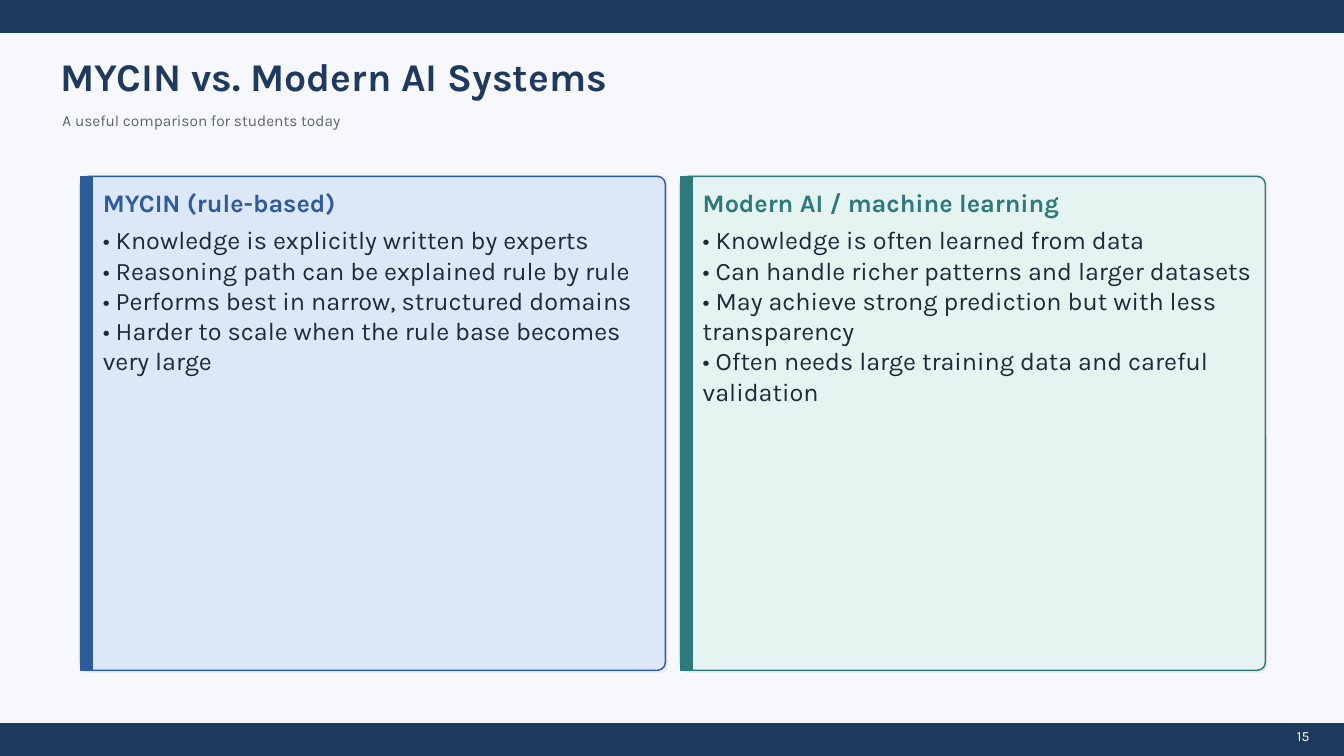
from dataclasses import dataclass

from lxml import etree
from pptx import Presentation
from pptx.dml.color import RGBColor
from pptx.enum.shapes import MSO_SHAPE
from pptx.enum.text import MSO_ANCHOR, PP_ALIGN
from pptx.oxml.ns import qn
from pptx.util import Inches, Pt

RECTANGLE, ROUNDED = MSO_SHAPE.RECTANGLE, MSO_SHAPE.ROUNDED_RECTANGLE
TOP, MIDDLE = MSO_ANCHOR.TOP, MSO_ANCHOR.MIDDLE
LEFT, CENTER = PP_ALIGN.LEFT, PP_ALIGN.CENTER

COLUMNS, ROWS = 133.3, 75
CELL = Inches(0.1)
PANEL_LEFT, PANEL_TOP = 8, 17.5
PANEL_WIDTH, PANEL_HEIGHT, PANEL_GAP = 58, 49, 1.5
BAR_HEIGHT = 3.2


@dataclass(frozen=True)
class Theme:
    font: str = "Karla"
    background: str = "F7F8FC"
    navy: str = "1F3A5F"
    muted: str = "5B6470"
    ink: str = "1F2937"
    white: str = "FFFFFF"
    shadow: str = "000000"
    blue: str = "2E5B9A"
    blue_tint: str = "DCE7F7"
    teal: str = "2C7A7B"
    teal_tint: str = "E5F4F1"
    title_size: int = 28
    body_size: int = 18
    subtitle_size: int = 11
    number_size: int = 10


class SlideBuilder:
    """Draws themed elements on one slide, measured in grid cells."""

    def __init__(self, slide, theme):
        self.slide = slide
        self.theme = theme
        fill = slide.background.fill
        fill.solid()
        fill.fore_color.rgb = RGBColor.from_string(theme.background)

    def place(self, *cells):
        return [round(cell * CELL) for cell in cells]

    def block(self, left, top, width, height, fill, line, kind=RECTANGLE):
        shape = self.slide.shapes.add_shape(kind, *self.place(left, top, width, height))
        shape.shadow.inherit = False
        shape.fill.solid()
        shape.fill.fore_color.rgb = RGBColor.from_string(fill)
        shape.line.color.rgb = RGBColor.from_string(line)
        shape.line.width = Pt(1)
        return shape

    def add_shadow(self, shape):
        effects = shape._element.spPr.find(qn("a:effectLst"))
        shadow = etree.SubElement(
            effects, qn("a:outerShdw"), blurRad=str(Pt(1)), dist=str(Pt(0.5)),
            dir=str(45 * 60000), algn="bl", rotWithShape="0")
        color = etree.SubElement(shadow, qn("a:srgbClr"), val=self.theme.shadow)
        etree.SubElement(color, qn("a:alpha"), val="12000")

    def text(self, left, top, width, height, lines, size, color,
             bold=False, anchor=MIDDLE, align=LEFT, padded=False):
        box = self.slide.shapes.add_textbox(*self.place(left, top, width, height))
        frame = box.text_frame
        frame.word_wrap = True
        frame.vertical_anchor = anchor
        if not padded:
            frame.margin_left = frame.margin_right = 0
            frame.margin_top = frame.margin_bottom = 0
        for index, line in enumerate(lines):
            paragraph = frame.add_paragraph() if index else frame.paragraphs[0]
            paragraph.alignment = align
            run = paragraph.add_run()
            run.text = line
            run.font.name = self.theme.font
            run.font.size = Pt(size)
            run.font.bold = bold
            run.font.color.rgb = RGBColor.from_string(color)

    def panel(self, index, heading, points, accent, tint):
        left = PANEL_LEFT + index * (PANEL_WIDTH + PANEL_GAP)
        size = self.theme.body_size
        card = self.block(left, PANEL_TOP, PANEL_WIDTH, PANEL_HEIGHT, tint, accent, ROUNDED)
        card.adjustments[0] = 0.016
        self.add_shadow(card)
        self.block(left, PANEL_TOP, 1.2, PANEL_HEIGHT, accent, accent)
        self.text(left + 2.2, PANEL_TOP + 1.2, 55, 2.8, [heading], size, accent, bold=True)
        self.text(left + 2.2, PANEL_TOP + 4.8, 55, 43.2, points, size,
                  self.theme.ink, anchor=TOP)


def main():
    theme = Theme()
    presentation = Presentation()
    presentation.slide_width = round(COLUMNS * CELL)
    presentation.slide_height = ROWS * CELL
    slide = presentation.slides.add_slide(presentation.slide_layouts[6])
    builder = SlideBuilder(slide, theme)

    for top in (0, ROWS - BAR_HEIGHT):
        builder.block(0, top, COLUMNS, BAR_HEIGHT, theme.navy, theme.navy)
    builder.text(6, 5, 88, 5, ["MYCIN vs. Modern AI Systems"],
                 theme.title_size, theme.navy, bold=True)
    builder.text(6.2, 10.8, 88, 2.2, ["A useful comparison for students today"],
                 theme.subtitle_size, theme.muted)

    panels = [
        ("MYCIN (rule-based)", [
            "• Knowledge is explicitly written by experts",
            "• Reasoning path can be explained rule by rule",
            "• Performs best in narrow, structured domains",
            "• Harder to scale when the rule base becomes very large",
        ], theme.blue, theme.blue_tint),
        ("Modern AI / machine learning", [
            "• Knowledge is often learned from data",
            "• Can handle richer patterns and larger datasets",
            "• May achieve strong prediction but with less transparency",
            "• Often needs large training data and careful validation",
        ], theme.teal, theme.teal_tint),
    ]
    for index, panel in enumerate(panels):
        builder.panel(index, *panel)

    builder.text(127.5, 71.7, 3.5, 1.8, ["15"], theme.number_size, theme.white,
                 anchor=TOP, align=CENTER, padded=True)
    presentation.save("out.pptx")


if __name__ == "__main__":
    main()
